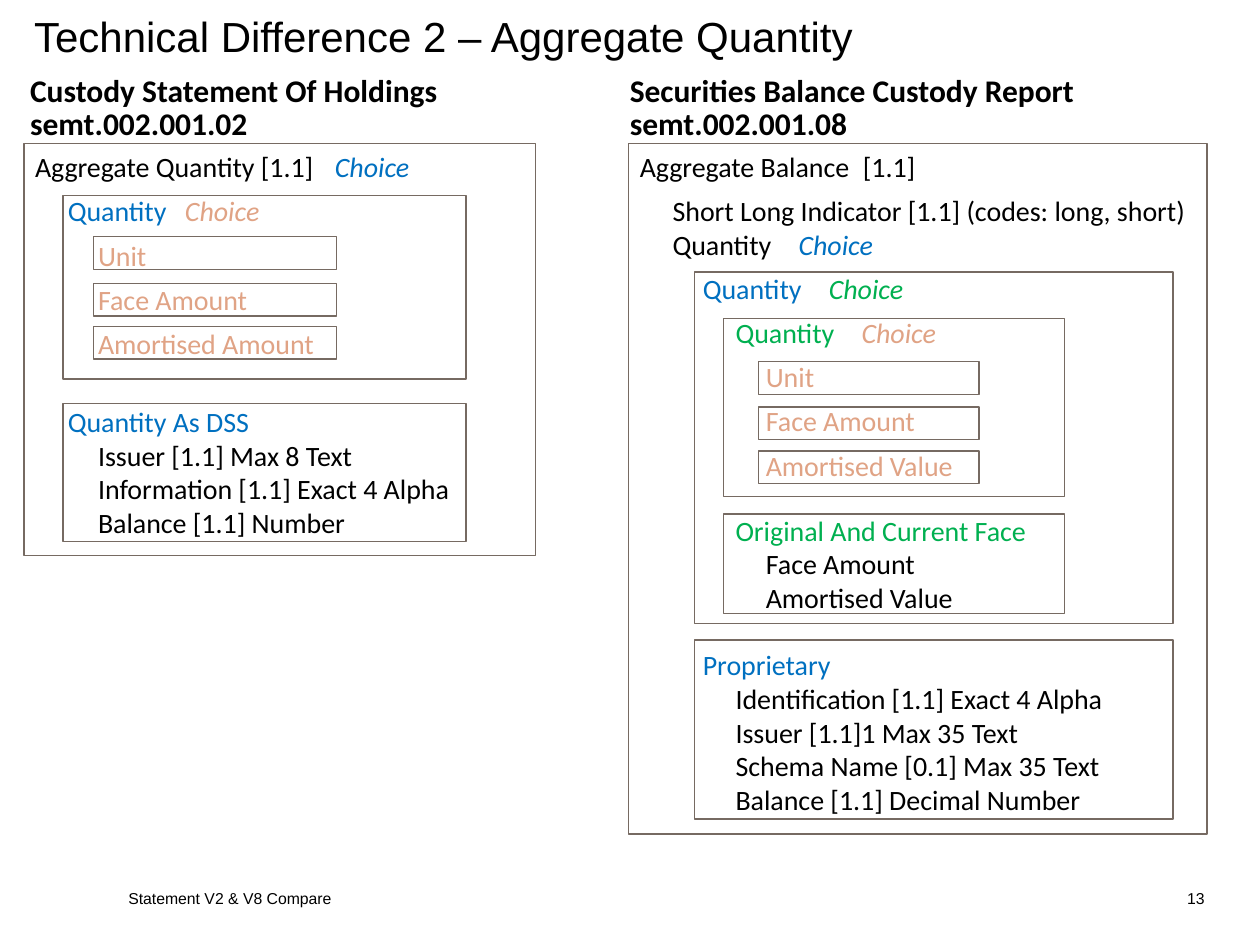
from lxml import etree
from pptx import Presentation
from pptx.dml.color import RGBColor
from pptx.enum.shapes import MSO_SHAPE
from pptx.enum.text import MSO_ANCHOR, MSO_AUTO_SIZE, PP_ALIGN
from pptx.oxml.ns import qn
from pptx.util import Inches, Pt

COLORS = {"text": "000000", "blue": "0070C0", "green": "00B050",
          "tan": "E0A385", "border": "766A62"}


def write_line(frame, text, size=16, font="Calibri", color="text", bold=False,
               align=PP_ALIGN.LEFT, stops=(), choice=None,
               before=0, after=0, spacing=None):
    """Write one paragraph; choice is the colour of an italic "Choice" mark."""
    first = frame.paragraphs[0]
    paragraph = frame.add_paragraph() if first.runs else first
    paragraph.alignment = align
    paragraph.space_before, paragraph.space_after = Pt(before), Pt(after)
    if spacing:
        paragraph.line_spacing = Pt(spacing)
    if stops:
        tabs = etree.SubElement(paragraph._p.get_or_add_pPr(), qn("a:tabLst"))
        for stop in stops:
            etree.SubElement(tabs, qn("a:tab"), pos=str(Inches(stop)), algn="l")
    parts = [(text, color, False)]
    if choice:
        parts = [(text + "\t", color, False), ("Choice", choice, True)]
    for words, tone, italic in parts:
        run = paragraph.add_run()
        run.text = words
        run.font.name, run.font.size = font, Pt(size)
        run.font.bold, run.font.italic = bold, italic
        run.font.color.rgb = RGBColor.from_string(COLORS[tone])


def add_frame(slide, left, top, width, height, anchor=MSO_ANCHOR.TOP):
    box = slide.shapes.add_textbox(Inches(left), Inches(top), Inches(width), Inches(height))
    box.text_frame.word_wrap = True
    box.text_frame.vertical_anchor = anchor
    return box.text_frame


presentation = Presentation()
presentation.slide_width, presentation.slide_height = Inches(10), Inches(7.5)
slide = presentation.slides.add_slide(presentation.slide_layouts[5])

# Title
title = slide.shapes.title
title.left, title.top = Inches(0.17), Inches(0)
title.width, title.height = Inches(9.73), Inches(0.56)
title.text_frame.auto_size = MSO_AUTO_SIZE.NONE
title.text_frame.vertical_anchor = MSO_ANCHOR.MIDDLE
write_line(title.text_frame, "Technical Difference 2 – Aggregate Quantity",
           size=24, font="Arial")

# Nested frames, outermost first: left, top, width, height
frames = [
    (0.19, 1.14, 4.06, 3.27), (0.5, 1.55, 3.2, 1.46), (0.5, 3.2, 3.2, 1.1),
    (4.99, 1.14, 4.59, 5.48), (5.51, 2.16, 3.8, 2.79), (5.51, 5.08, 3.8, 1.42),
    (5.74, 2.53, 2.71, 1.41), (5.74, 4.08, 2.71, 0.79),
]
frames += [(0.74, top, 1.93, 0.26) for top in (1.88, 2.25, 2.59)]
frames += [(6.02, top, 1.75, 0.26) for top in (2.87, 3.23, 3.58)]
for frame_box in frames:
    rectangle = slide.shapes.add_shape(MSO_SHAPE.RECTANGLE, *map(Inches, frame_box))
    rectangle.shadow.inherit = False
    rectangle.fill.background()
    rectangle.line.color.rgb = RGBColor.from_string(COLORS["border"])
    rectangle.line.width = Pt(0.75)

# Column headings
headings = [
    (0.14, 3.46, "Custody Statement Of Holdings", "semt.002.001.02"),
    (4.9, 3.76, "Securities Balance Custody Report", "semt.002.001.08"),
]
for left, width, *lines in headings:
    heading = add_frame(slide, left, 0.55, width, 0.63)
    for line in lines:
        write_line(heading, line, size=18, bold=True, spacing=19)

# Message structures: indent, text, format
blank_line = 19.5
quantity_lines = [
    (0, "Aggregate Quantity [1.1]", dict(choice="blue", stops=[2.38], after=6)),
    (0.26, "Quantity", dict(color="blue", choice="tan", stops=[1.19], after=6)),
    (0.5, "Unit", dict(color="tan", after=6)),
    (0.5, "Face Amount", dict(color="tan", after=6)),
    (0.5, "Amortised Amount", dict(color="tan", after=6)),
    (0.26, "Quantity As DSS", dict(color="blue", before=blank_line)),
    (0.5, "Issuer [1.1] Max 8 Text", {}),
    (0.5, "Information [1.1] Exact 4 Alpha", {}),
    (0.5, "Balance [1.1] Number", {}),
]
balance_lines = [
    (0, "Aggregate Balance\t[1.1]", dict(stops=[1.77], after=6)),
    (0.26, "Short Long Indicator [1.1] (codes: long, short)", {}),
    (0.26, "Quantity", dict(choice="blue", stops=[1.26], after=6)),
    (0.5, "Quantity", dict(color="blue", choice="green", stops=[1.5], after=6)),
    (0.76, "Quantity", dict(color="green", choice="tan", stops=[1.76], after=6)),
    (1, "Unit", dict(color="tan", after=6)),
    (1, "Face Amount", dict(color="tan", after=6)),
    (1, "Amortised Value", dict(color="tan", after=6)),
    (0.76, "Original And Current Face", dict(color="green", before=12)),
    (1, "Face Amount", {}),
    (1, "Amortised Value", {}),
    (0.5, "Proprietary", dict(color="blue", before=blank_line)),
    (0.76, "Identification [1.1] Exact 4 Alpha", {}),
    (0.76, "Issuer [1.1]1 Max 35 Text", {}),
    (0.76, "Schema Name [0.1] Max 35 Text", {}),
    (0.76, "Balance [1.1] Decimal Number", {}),
]
structures = [((0.18, 1.14, 3.53, 3.21), quantity_lines),
              ((4.98, 1.14, 4.56, 5.52), balance_lines)]
for position, lines in structures:
    structure = add_frame(slide, *position)
    for indent, text, line_format in lines:
        stops = line_format.get("stops", [])
        if indent:
            text, stops = "\t" + text, [indent, *stops]
        write_line(structure, text, **{**line_format, "stops": stops})

# Footer and slide number
footers = [(0.92, 6.21, "Statement V2 & V8 Compare", PP_ALIGN.LEFT),
           (8.83, 0.83, "13", PP_ALIGN.RIGHT)]
for left, width, text, align in footers:
    footer = add_frame(slide, left, 7, width, 0.25, anchor=MSO_ANCHOR.MIDDLE)
    write_line(footer, text, size=9, font="Arial", align=align)

presentation.save("out.pptx")
